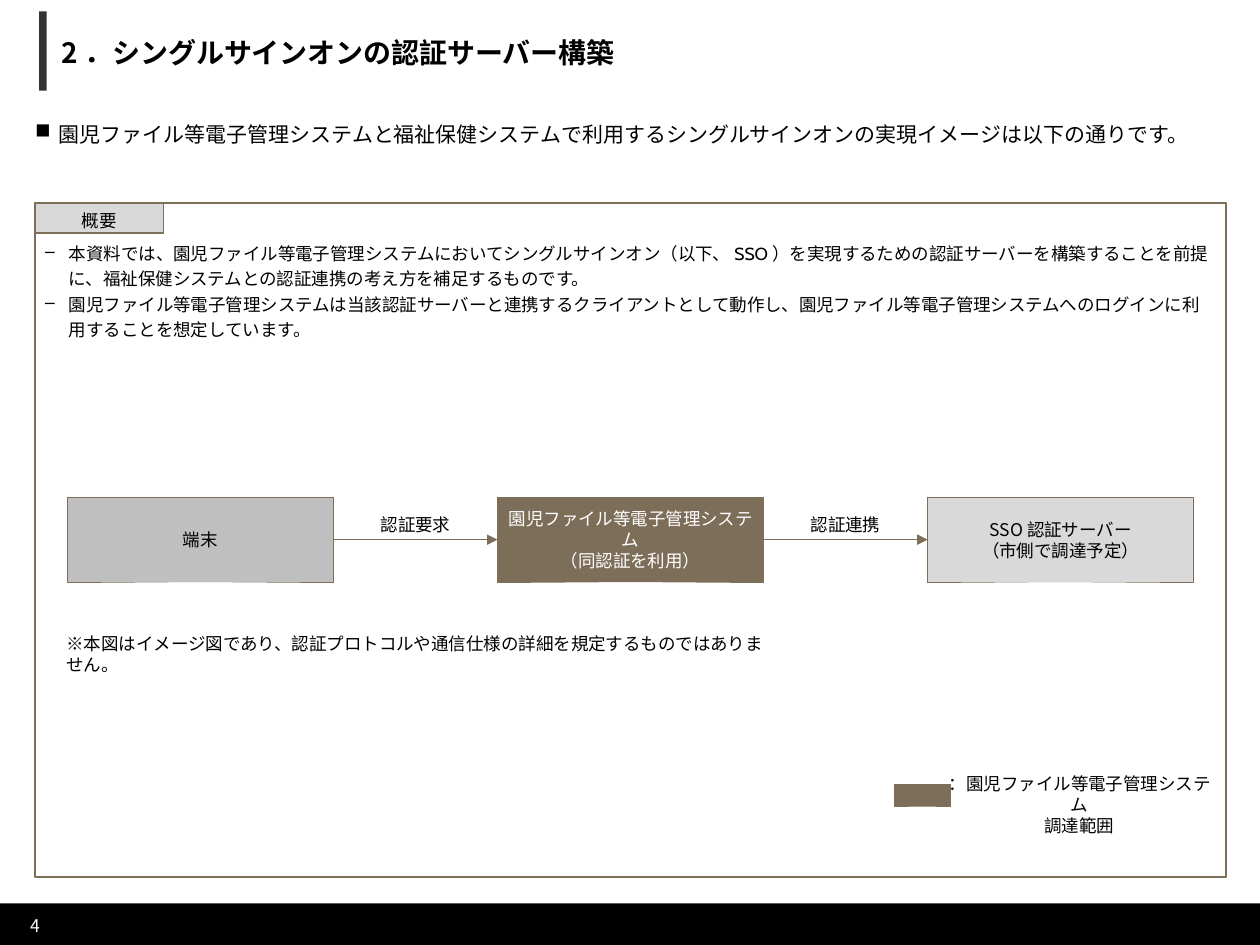
from lxml import etree
from pptx import Presentation
from pptx.dml.color import RGBColor
from pptx.enum.shapes import MSO_CONNECTOR, MSO_SHAPE
from pptx.enum.text import MSO_ANCHOR, PP_ALIGN
from pptx.oxml.ns import qn
from pptx.util import Cm, Pt

RECTANGLE = MSO_SHAPE.RECTANGLE
STRAIGHT = MSO_CONNECTOR.STRAIGHT
TOP, MIDDLE = MSO_ANCHOR.TOP, MSO_ANCHOR.MIDDLE
LEFT, CENTER = PP_ALIGN.LEFT, PP_ALIGN.CENTER

FONT, BODY_FONT = "Noto Sans CJK JP", "Cabin"
BLACK, WHITE, BAR_GRAY = "000000", "FFFFFF", "333333"
LIGHT_GRAY, MID_GRAY = "D9D9D9", "BFBFBF"
BROWN, FRAME_BROWN = "7D6E59", "7D6E5A"

SYSTEM = "園児ファイル等電子管理システム"
TITLE = "2．シングルサインオンの認証サーバー構築"
LEAD = f"{SYSTEM}と福祉保健システムで利用するシングルサインオンの実現イメージは以下の通りです。"
OVERVIEW = [
    f"本資料では、{SYSTEM}においてシングルサインオン（以下、SSO）を実現するための認証サーバーを"
    "構築することを前提に、福祉保健システムとの認証連携の考え方を補足するものです。",
    f"{SYSTEM}は当該認証サーバーと連携するクライアントとして動作し、{SYSTEM}へのログインに"
    "利用することを想定しています。",
]
NODES = [
    (["端末"], MID_GRAY, BLACK),
    ([SYSTEM, "（同認証を利用）"], BROWN, WHITE),
    (["SSO認証サーバー", "（市側で調達予定）"], LIGHT_GRAY, BLACK),
]
FLOWS = ["認証要求", "認証連携"]
NOTE = "※本図はイメージ図であり、認証プロトコルや通信仕様の詳細を規定するものではありません。"
LEGEND = [f"：{SYSTEM}", "調達範囲"]

# Lengths in centimetres
FRAME_LEFT, FRAME_TOP, FRAME_WIDTH, FRAME_HEIGHT = 0.71, 4.09, 24, 13.59
NODE_LEFT, NODE_TOP, NODE_WIDTH, NODE_HEIGHT, NODE_PITCH = 1.36, 10.03, 5.36, 1.7, 8.67
LABEL_WIDTH, LABEL_HEIGHT = 3.23, 1.02
BULLET_INDENT = 0.48


def color(value):
    return RGBColor.from_string(value)


def set_values(target, values):
    for name, value in values.items():
        setattr(target, name, value)


def add_box(slide, place, fill=None, line=None, line_width=0.25):
    shape = slide.shapes.add_shape(RECTANGLE, *map(Cm, place))
    shape.shadow.inherit = False
    if fill:
        shape.fill.solid()
        shape.fill.fore_color.rgb = color(fill)
    else:
        shape.fill.background()
    if line:
        shape.line.color.rgb = color(line)
        shape.line.width = Pt(line_width)
    else:
        shape.line.fill.background()
    return shape


def add_run(paragraph, text, size, text_color, bold, font):
    run = paragraph.add_run()
    run.text = text
    set_values(run.font, {"size": Pt(size), "bold": bold, "name": font})
    run.font.color.rgb = color(text_color)
    east_asian = etree.SubElement(run.font._element, qn("a:ea"))
    east_asian.set("typeface", FONT)


def add_bullet(paragraph, character):
    properties = paragraph._p.get_or_add_pPr()
    properties.set("marL", str(Cm(BULLET_INDENT)))
    properties.set("indent", str(-Cm(BULLET_INDENT)))
    etree.SubElement(properties, qn("a:buChar")).set("char", character)


def write(shape, lines, size=10, text_color=BLACK, bold=False, align=CENTER, anchor=MIDDLE,
          margins=(0.1, 0.1), spacing=None, bullet=None, font=FONT):
    """Fill a shape with one paragraph per line; the system name always keeps FONT."""
    frame = shape.text_frame
    across, down = map(Cm, margins)
    set_values(frame, {"word_wrap": True, "vertical_anchor": anchor,
                       "margin_left": across, "margin_right": across,
                       "margin_top": down, "margin_bottom": down})
    for index, line in enumerate(lines):
        paragraph = frame.add_paragraph() if index else frame.paragraphs[0]
        set_values(paragraph, {"alignment": align, "line_spacing": spacing})
        if bullet:
            add_bullet(paragraph, bullet)
        if font == FONT:
            add_run(paragraph, line, size, text_color, bold, font)
            continue
        for part_index, part in enumerate(line.split(SYSTEM)):
            if part_index:
                add_run(paragraph, SYSTEM, size, text_color, bold, FONT)
            if part:
                add_run(paragraph, part, size, text_color, bold, font)


def add_text(slide, place, lines, **options):
    write(slide.shapes.add_textbox(*map(Cm, place)), lines, **options)


def add_arrow(slide, start, end, height):
    arrow = slide.shapes.add_connector(STRAIGHT, Cm(start), Cm(height), Cm(end), Cm(height))
    arrow.line.color.rgb = color(BROWN)
    arrow.line.width = Pt(0.75)
    etree.SubElement(arrow.line._get_or_add_ln(), qn("a:tailEnd")).set("type", "triangle")
    etree.SubElement(arrow._element.spPr, qn("a:effectLst"))


def add_header_and_footer(slide):
    add_box(slide, (0, 18.21, 25.4, 0.84), BLACK)
    add_box(slide, (0.79, 0.23, 0.15, 1.6), BAR_GRAY)
    plain = {"align": LEFT, "margins": (0, 0)}
    add_text(slide, (0.61, 18.44, 1.27, 0.64), ["4"], text_color=WHITE, anchor=TOP, **plain)
    add_text(slide, (1.24, 0.28, 21, 1.55), [TITLE], size=16, bold=True, **plain)
    lead = add_box(slide, (FRAME_LEFT, 2.34, 23.57, 1.55), WHITE)
    write(lead, [LEAD], size=12, anchor=TOP, spacing=1.2, bullet="■", **plain)


def add_overview(slide):
    add_box(slide, (FRAME_LEFT, FRAME_TOP, FRAME_WIDTH, FRAME_HEIGHT), None, FRAME_BROWN, 1)
    heading = add_box(slide, (FRAME_LEFT, FRAME_TOP, 2.59, 0.61), LIGHT_GRAY, FRAME_BROWN, 1)
    write(heading, ["概要"], margins=(0.2, 0.1), spacing=1.2)
    add_text(slide, (FRAME_LEFT, 4.72, FRAME_WIDTH, 3.96), OVERVIEW, align=LEFT, anchor=TOP,
             margins=(0.2, 0.1), spacing=1.2, bullet="–", font=BODY_FONT)


def add_flow(slide):
    lefts = [NODE_LEFT + index * NODE_PITCH for index in range(len(NODES))]
    for left, (lines, fill, text_color) in zip(lefts, NODES):
        node = add_box(slide, (left, NODE_TOP, NODE_WIDTH, NODE_HEIGHT), fill, BROWN)
        write(node, lines, text_color=text_color)
    for left, next_left, label in zip(lefts, lefts[1:], FLOWS):
        start = left + NODE_WIDTH
        add_arrow(slide, start, next_left, NODE_TOP + NODE_HEIGHT / 2)
        label_left = (start + next_left - LABEL_WIDTH) / 2
        add_text(slide, (label_left, NODE_TOP + 0.03, LABEL_WIDTH, LABEL_HEIGHT), [label])


def add_note_and_legend(slide):
    add_text(slide, (1.24, 12.67, 14.45, LABEL_HEIGHT), [NOTE], align=LEFT)
    add_text(slide, (18.9, 15.7, 5.72, LABEL_HEIGHT), LEGEND)
    add_box(slide, (18.03, 15.82, 1.12, 0.43), BROWN, BROWN)


def main():
    presentation = Presentation()
    set_values(presentation, {"slide_width": Cm(25.4), "slide_height": Cm(19.05)})
    slide = presentation.slides.add_slide(presentation.slide_layouts[6])
    add_header_and_footer(slide)
    add_overview(slide)
    add_flow(slide)
    add_note_and_legend(slide)
    presentation.save("out.pptx")


if __name__ == "__main__":
    main()
